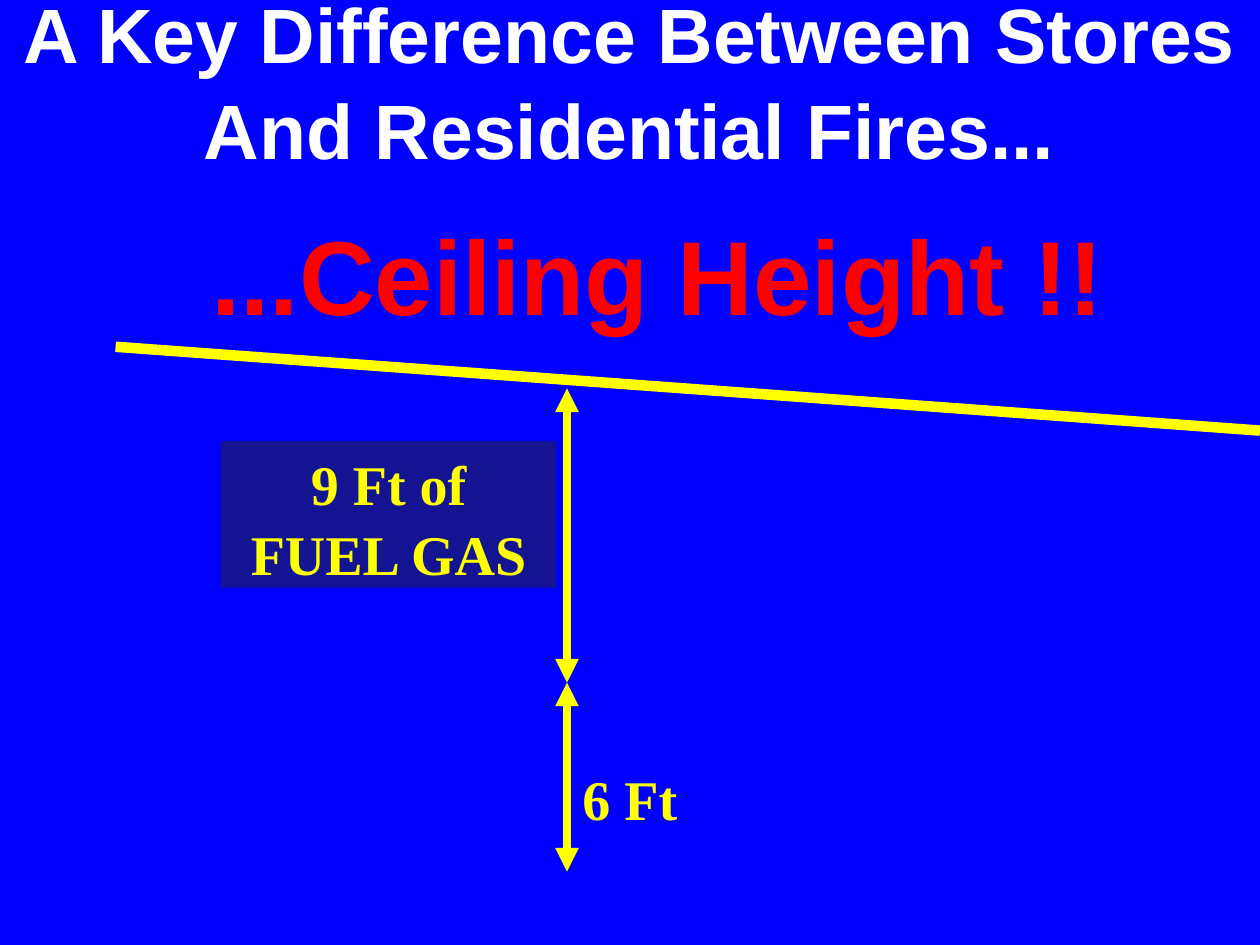
from lxml import etree
from pptx import Presentation
from pptx.dml.color import RGBColor
from pptx.enum.shapes import MSO_CONNECTOR, MSO_SHAPE
from pptx.enum.text import MSO_ANCHOR, PP_ALIGN
from pptx.oxml.ns import qn
from pptx.util import Cm, Pt

BLUE = RGBColor(0x00, 0x00, 0xFF)
YELLOW = RGBColor(0xFF, 0xFF, 0x00)
RED = RGBColor(0xFF, 0x00, 0x00)
WHITE = RGBColor(0xFF, 0xFF, 0xFF)
CHARCOAL = RGBColor(0x29, 0x29, 0x29)
SANS, SERIF = "Arial", "Times New Roman"
STRAIGHT = MSO_CONNECTOR.STRAIGHT
RECTANGLE = MSO_SHAPE.RECTANGLE
LEFT, CENTER = PP_ALIGN.LEFT, PP_ALIGN.CENTER
TOP, MIDDLE = MSO_ANCHOR.TOP, MSO_ANCHOR.MIDDLE

ARROW_X = 11.43
GAS_TOP, GAS_BOTTOM, FLOOR = 7.83, 13.76, 17.57


def write(sp, text, font, size, color, align=CENTER, anchor=TOP):
    tf = sp.text_frame
    tf.text = text
    tf.word_wrap = True
    tf.vertical_anchor = anchor
    p = tf.paragraphs[0]
    p.alignment = align
    p.line_spacing = 1.04
    p.space_before = Pt(3)
    r = p.runs[0]
    r.font.name = font
    r.font.size = Pt(size)
    r.font.bold = True
    r.font.color.rgb = color


def add_text(s, x, y, w, h):
    return s.shapes.add_textbox(Cm(x), Cm(y), Cm(w), Cm(h))


def add_box(s, x, y, w, h, color, opacity=100):
    sp = s.shapes.add_shape(RECTANGLE, Cm(x), Cm(y), Cm(w), Cm(h))
    sp.shadow.inherit = False
    sp.fill.solid()
    sp.fill.fore_color.rgb = color
    sp.line.fill.background()
    if opacity < 100:
        clr = sp._element.spPr.find(".//" + qn("a:srgbClr"))
        etree.SubElement(clr, qn("a:alpha"), val=str(opacity * 1000))
    return sp


def add_line(s, x1, y1, x2, y2, width, arrows=False):
    line = s.shapes.add_connector(STRAIGHT, Cm(x1), Cm(y1), Cm(x2), Cm(y2))
    line.line.color.rgb = YELLOW
    line.line.width = Pt(width)
    if arrows:
        ln = line.line._get_or_add_ln()
        for end in ("a:headEnd", "a:tailEnd"):
            etree.SubElement(ln, qn(end), type="triangle")
    etree.SubElement(line._element.spPr, qn("a:effectLst"))


def main():
    prs = Presentation()
    prs.slide_width, prs.slide_height = Cm(25.4), Cm(19.05)
    s = prs.slides.add_slide(prs.slide_layouts[6])
    s.background.fill.solid()
    s.background.fill.fore_color.rgb = BLUE

    title = add_box(s, 0, 0, 25.4, 3.18, BLUE)
    write(title, "A Key Difference Between Stores And Residential Fires...",
          SANS, 44, WHITE, anchor=MIDDLE)
    answer = add_text(s, 4.02, 4.02, 19.05, 2.8)
    write(answer, "...Ceiling Height !!", SANS, 60, RED, align=LEFT)

    add_line(s, 2.33, 6.99, 25.4, 8.68, 6)
    for top, bottom in ((GAS_TOP, GAS_BOTTOM), (GAS_BOTTOM, FLOOR)):
        add_line(s, ARROW_X, top, ARROW_X, bottom, 4.5, arrows=True)

    gas = add_box(s, 4.45, 8.89, 6.77, 2.96, CHARCOAL, opacity=50)
    write(gas, "9 Ft of FUEL GAS", SERIF, 32, YELLOW)
    clearance = add_text(s, ARROW_X, 15.24, 2.54, 1.6)
    write(clearance, "6 Ft", SERIF, 32, YELLOW)

    prs.save("out.pptx")


if __name__ == "__main__":
    main()
